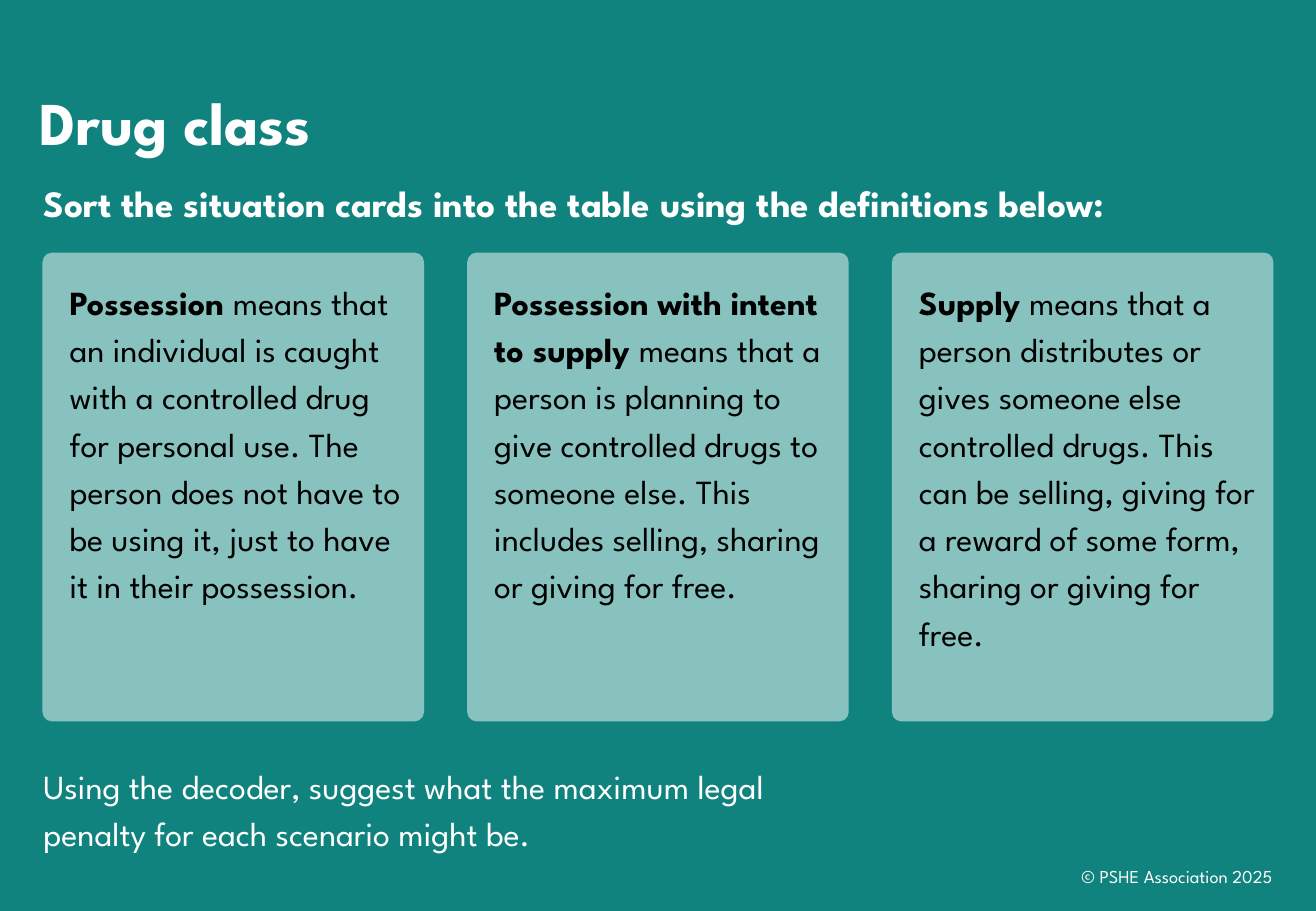
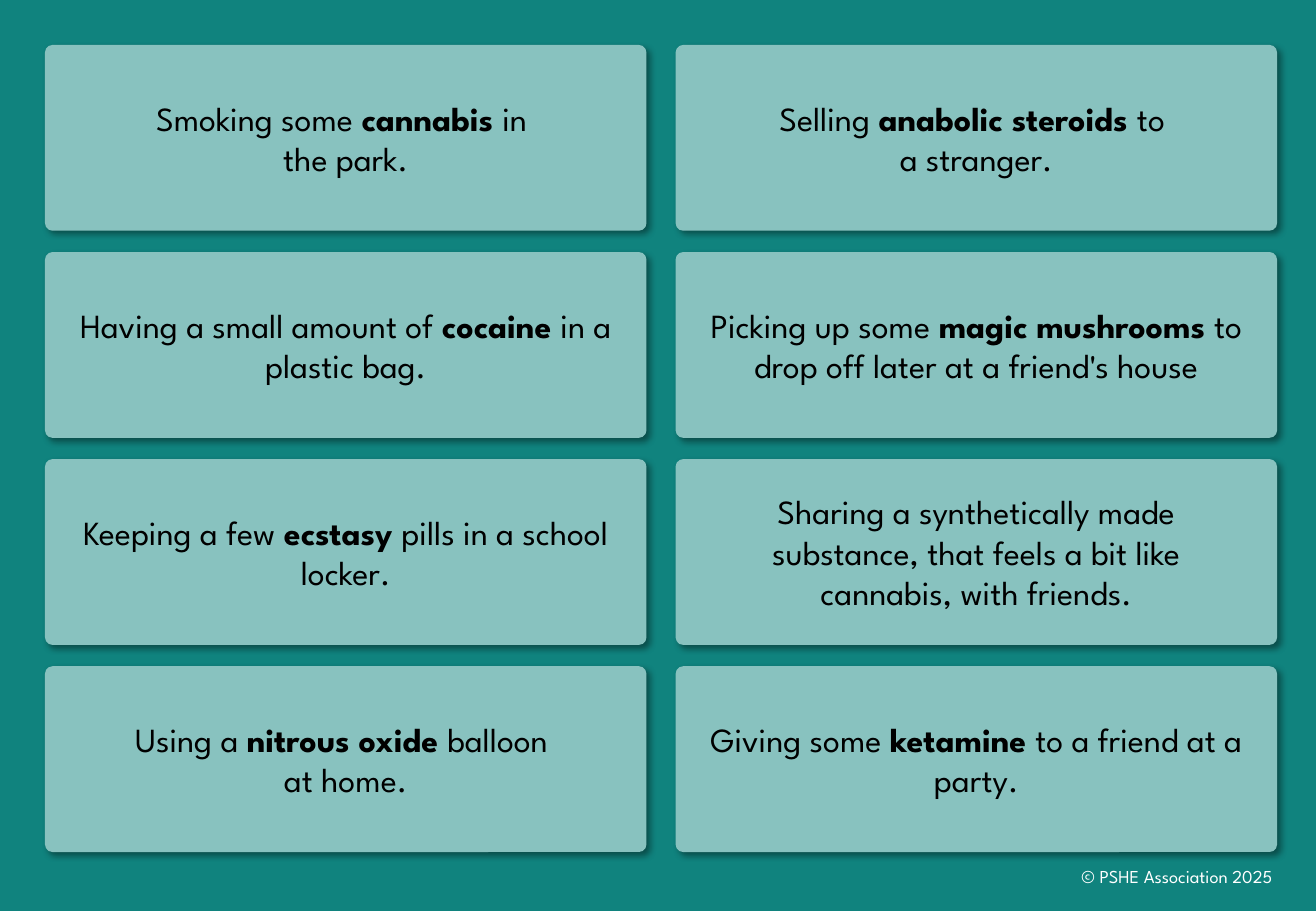
from lxml.etree import SubElement
from pptx import Presentation
from pptx.dml.color import RGBColor
from pptx.enum.shapes import MSO_SHAPE
from pptx.enum.text import MSO_ANCHOR, PP_ALIGN
from pptx.oxml.ns import qn
from pptx.util import Emu, Pt

FONT = "League Spartan"
TEAL, MINT, WHITE, BLACK = "10837E", "88C2BF", "FFFFFF", "000000"
DEFINITIONS = [
    "**Possession **means that an individual is caught with a controlled drug for personal use. "
    "The person does not have to be using it, just to have it in their possession.",
    "**Possession with intent to supply **means that a person is planning to give controlled "
    "drugs to someone else. This includes selling, sharing or giving for free.",
    "**Supply **means that a person distributes or gives someone else controlled drugs. "
    "This can be selling, giving for a reward of some form, sharing or giving for free.",
]
SITUATIONS = [
    "Smoking some **cannabis **in \nthe park.",
    "Selling **anabolic steroids **to \na stranger.",
    "Having a small amount of **cocaine **in a plastic bag.",
    "Picking up some **magic mushrooms **to drop off later at a friend's house",
    "Keeping a few **ecstasy **pills in a school locker.",
    "Sharing a synthetically made substance, that feels a bit like cannabis, with friends.",
    "Using a **nitrous oxide **balloon \nat home.",
    "Giving some **ketamine **to a friend at a party.",
]


def px(length):
    return Emu(length * 4572)


def color(value):
    return RGBColor.from_string(value)


class Deck:
    """Shared style and the slide being built."""

    def __init__(self):
        self.prs = Presentation()
        self.prs.slide_width, self.prs.slide_height = px(2166), px(1500)
        self.slide = None

    def new_slide(self):
        self.slide = self.prs.slides.add_slide(self.prs.slide_layouts[6])
        fill = self.slide.background.fill
        fill.solid()
        fill.fore_color.rgb = color(TEAL)
        self.text("© PSHE Association 2025", (1626, 1402, 488, 80), 10.8,
                  align=PP_ALIGN.RIGHT, anchor=MSO_ANCHOR.MIDDLE)

    def fill_frame(self, frame, content, size, ink, align, anchor, leading=None):
        frame.word_wrap = True
        frame.vertical_anchor = anchor
        paragraph = frame.paragraphs[0]
        paragraph.alignment = align
        if leading:
            paragraph.line_spacing = Pt(leading)
        for index, part in enumerate(content.split("**")):
            for row, line in enumerate(part.split("\n")):
                if row:
                    paragraph.add_line_break()
                if line:
                    run = paragraph.add_run()
                    run.text = line
                    run.font.name = FONT
                    run.font.size = Pt(size)
                    run.font.bold = index % 2 == 1
                    run.font.color.rgb = color(ink)

    def text(self, content, area, size, align=PP_ALIGN.LEFT, anchor=MSO_ANCHOR.TOP, leading=None):
        box = self.slide.shapes.add_textbox(*map(px, area))
        self.fill_frame(box.text_frame, content, size, WHITE, align, anchor, leading)

    def title(self, content):
        self.text(f"**{content}**", (46, 118, 1068, 152), 36, anchor=MSO_ANCHOR.BOTTOM, leading=43)

    def card(self, content, area, radius, insets, align, anchor, leading=None, raised=False):
        panel = self.slide.shapes.add_shape(MSO_SHAPE.ROUNDED_RECTANGLE, *map(px, area))
        panel.adjustments[0] = radius
        panel.fill.solid()
        panel.fill.fore_color.rgb = color(MINT)
        panel.line.fill.background()
        panel.shadow.inherit = False
        if raised:
            self.drop_shadow(panel)
        frame = panel.text_frame
        (frame.margin_left, frame.margin_top,
         frame.margin_right, frame.margin_bottom) = map(px, insets)
        self.fill_frame(frame, content, 20, BLACK, align, anchor, leading)

    def drop_shadow(self, panel):
        effects = panel._element.spPr.find(qn("a:effectLst"))
        shadow = SubElement(effects, qn("a:outerShdw"), blurRad=str(Pt(4)), dist=str(Pt(3)),
                            dir=str(45 * 60000), algn="tl", rotWithShape="0")
        tint = SubElement(shadow, qn("a:srgbClr"), val=BLACK)
        SubElement(tint, qn("a:alpha"), val="40000")


def definitions_slide(deck):
    deck.new_slide()
    deck.title("Drug class")
    deck.text("**Sort the situation cards into the table using the definitions below:**",
              (52, 288, 2034, 94), 22)
    for column, definition in enumerate(DEFINITIONS):
        deck.card(definition, (70 + 699 * column, 416, 628, 772), 0.025, (40, 32, 24, 10),
                  PP_ALIGN.LEFT, MSO_ANCHOR.TOP, leading=28)
    deck.text("Using the decoder, suggest what the maximum legal penalty for each scenario might be.",
              (52, 1240, 1346, 172), 20, leading=28)


def situations_slide(deck):
    deck.new_slide()
    for index, situation in enumerate(SITUATIONS):
        row, column = divmod(index, 2)
        deck.card(situation, (74 + 1038 * column, 74 + 341 * row, 990, 306), 0.041,
                  (40, 10, 40, 10), PP_ALIGN.CENTER, MSO_ANCHOR.MIDDLE, raised=True)


def main():
    deck = Deck()
    definitions_slide(deck)
    situations_slide(deck)
    deck.prs.save("out.pptx")


if __name__ == "__main__":
    main()
